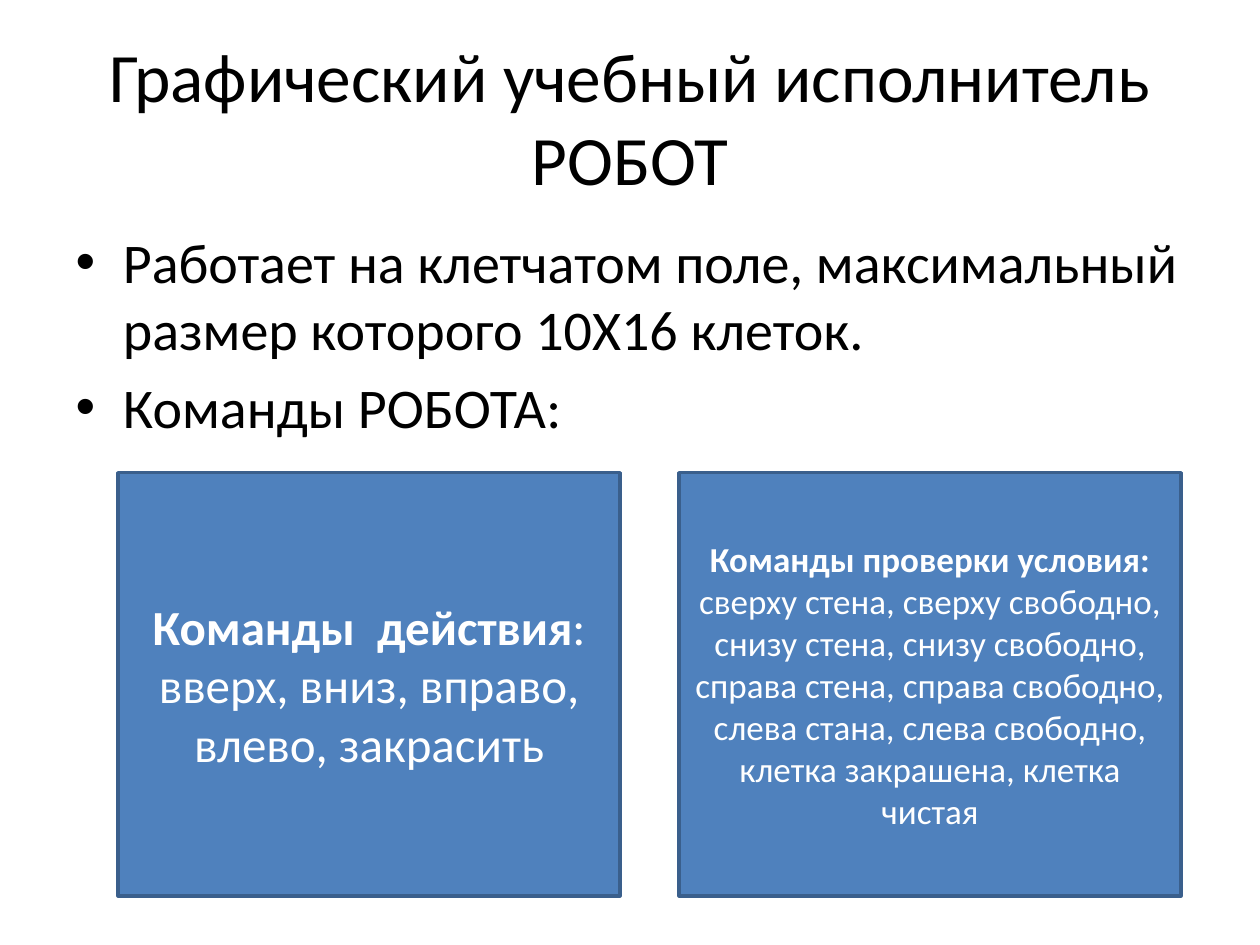
import dataclasses

import pptx
import pptx.dml.color
import pptx.enum.shapes
import pptx.enum.text
import pptx.util
from pptx.util import Cm


@dataclasses.dataclass(frozen=True)
class Theme:
    font: str = "Calibri"
    text: str = "000000"
    panel_text: str = "FFFFFF"
    panel_fill: str = "4F81BD"
    panel_line: str = "3A5F8C"
    title_size: float = 39.6
    body_size: float = 32
    actions_size: float = 28
    checks_size: float = 20
    line_width: float = 2


def rgb(value):
    return pptx.dml.color.RGBColor.from_string(value)


class SlideBuilder:
    def __init__(self, slide, theme):
        self.slide = slide
        self.theme = theme

    def format_run(self, run, size, color, bold=False):
        run.font.name = self.theme.font
        run.font.size = pptx.util.Pt(size)
        run.font.color.rgb = rgb(color)
        run.font.bold = bold

    def fill_placeholder(self, shape, box, text, size, anchor):
        shape.left, shape.top, shape.width, shape.height = box
        frame = shape.text_frame
        frame.text = text
        frame.auto_size = pptx.enum.text.MSO_AUTO_SIZE.NONE
        frame.vertical_anchor = anchor
        for paragraph in frame.paragraphs:
            for run in paragraph.runs:
                self.format_run(run, size, self.theme.text)

    def title(self, box, text):
        self.fill_placeholder(self.slide.shapes.title, box, text, self.theme.title_size,
                              pptx.enum.text.MSO_ANCHOR.MIDDLE)

    def bullets(self, box, items):
        self.fill_placeholder(self.slide.placeholders[1], box, "\n".join(items),
                              self.theme.body_size, pptx.enum.text.MSO_ANCHOR.TOP)

    def panel(self, box, heading, text, size):
        shape = self.slide.shapes.add_shape(pptx.enum.shapes.MSO_SHAPE.RECTANGLE, *box)
        shape.shadow.inherit = False
        shape.fill.solid()
        shape.fill.fore_color.rgb = rgb(self.theme.panel_fill)
        shape.line.color.rgb = rgb(self.theme.panel_line)
        shape.line.width = pptx.util.Pt(self.theme.line_width)
        frame = shape.text_frame
        frame.word_wrap = True
        frame.vertical_anchor = pptx.enum.text.MSO_ANCHOR.MIDDLE
        paragraph = frame.paragraphs[0]
        paragraph.alignment = pptx.enum.text.PP_ALIGN.CENTER
        for content, bold in ((heading, True), (text, False)):
            run = paragraph.add_run()
            run.text = content
            self.format_run(run, size, self.theme.panel_text, bold)


def main():
    presentation = pptx.Presentation()
    presentation.slide_width, presentation.slide_height = Cm(25.4), Cm(19.05)
    theme = Theme()
    builder = SlideBuilder(presentation.slides.add_slide(presentation.slide_layouts[1]), theme)

    builder.title((Cm(1.27), Cm(0.76), Cm(22.86), Cm(3.18)),
                  "Графический учебный исполнитель РОБОТ")
    builder.bullets((Cm(1.27), Cm(4.45), Cm(22.86), Cm(12.57)), [
        "Работает на клетчатом поле, максимальный размер которого 10Х16 клеток.",
        "Команды РОБОТА:",
    ])

    panels = [
        ("Команды  действия", ": вверх, вниз, вправо, влево, закрасить", theme.actions_size),
        ("Команды проверки условия: ",
         "сверху стена, сверху свободно, снизу стена, снизу свободно, справа стена, "
         "справа свободно, слева стана, слева свободно, клетка закрашена, клетка чистая",
         theme.checks_size),
    ]
    left, width, gap = 2.38, 10.12, 1.19
    for index, (heading, text, size) in enumerate(panels):
        box = (Cm(left + index * (width + gap)), Cm(9.53), Cm(width), Cm(8.53))
        builder.panel(box, heading, text, size)

    presentation.save("out.pptx")


if __name__ == "__main__":
    main()
